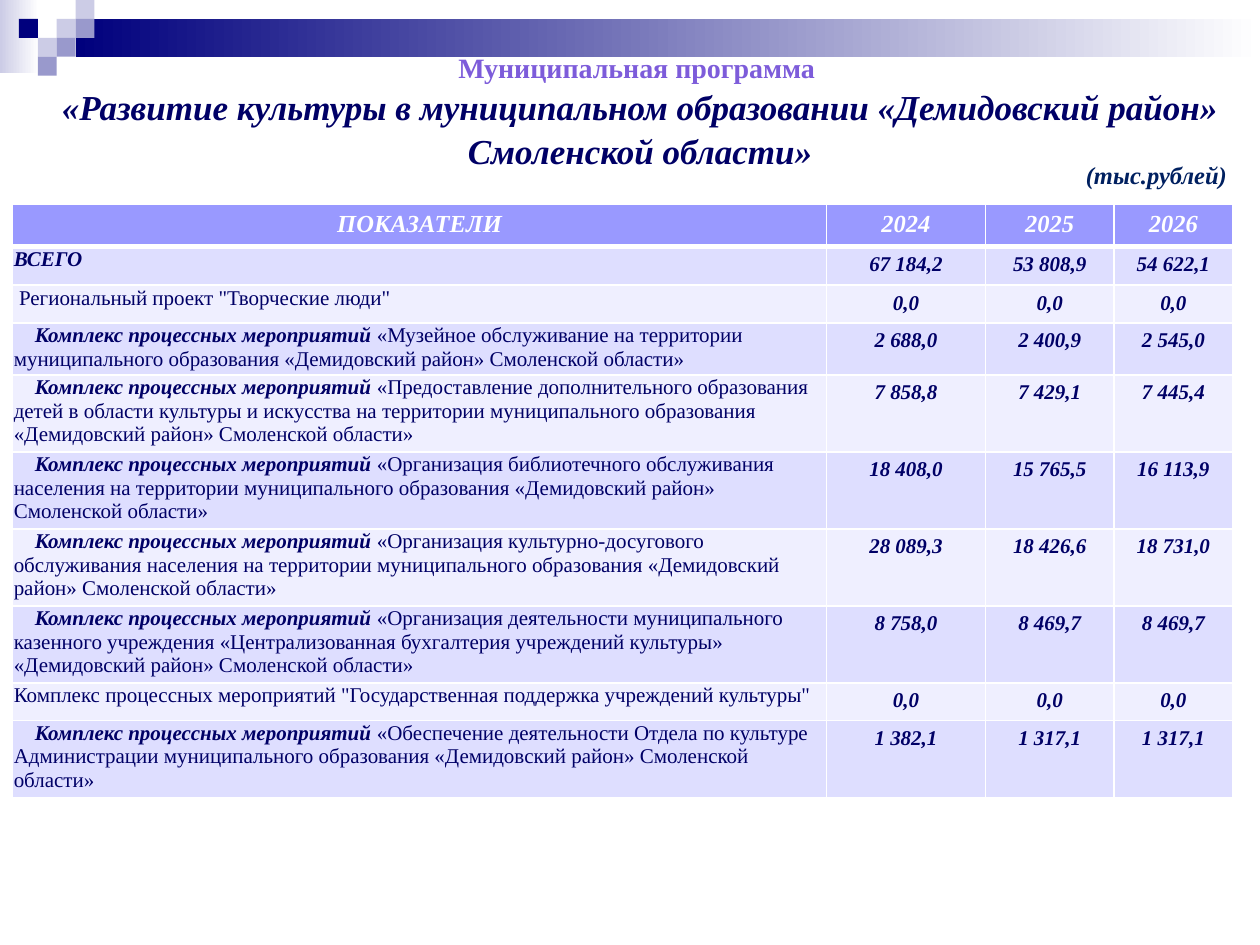
from lxml.etree import SubElement
from pptx import Presentation
from pptx.dml.color import RGBColor
from pptx.enum.shapes import MSO_SHAPE as Shape
from pptx.enum.text import PP_ALIGN as Align
from pptx.oxml.ns import qn
from pptx.util import Pt

FONT = "Times New Roman"
WHITE = RGBColor(0xFF, 0xFF, 0xFF)
NAVY = RGBColor(0x00, 0x00, 0x7D)
LILAC = RGBColor(0xCC, 0xCC, 0xE6)
MID = RGBColor(0x99, 0x99, 0xCC)
INK = RGBColor(0x00, 0x00, 0x66)
VIOLET = RGBColor(0x7D, 0x5C, 0xDA)
BLUE = RGBColor(0x00, 0x20, 0x60)
HEAD = RGBColor(0x99, 0x99, 0xFF)
BANDS = RGBColor(0xDE, 0xDE, 0xFF), RGBColor(0xEF, 0xEF, 0xFF)

TILE = 10.8
TILES = [  # column, row, colour
    (3, 1, LILAC), (4, 0, LILAC), (4, 1, MID), (2, 2, LILAC),
    (1, 1, NAVY), (3, 2, MID), (2, 3, MID),
]

COLS = [465.2, 90.7, 73.6, 67.7]
YEARS = ["ПОКАЗАТЕЛИ", "2024", "2025", "2026"]
LEAD = "Комплекс процессных мероприятий "
AREA = "муниципального образования «Демидовский район» Смоленской области»"
ROWS = [  # height, indent, bold part, plain part, values
    (22, 0, "ВСЕГО", "", ["67 184,2", "53 808,9", "54 622,1"]),
    (21.4, 3, "", 'Региональный проект "Творческие люди"', ["0,0"] * 3),
    (29.7, 12, LEAD, "«Музейное обслуживание на территории " + AREA,
     ["2 688,0", "2 400,9", "2 545,0"]),
    (44, 12, LEAD, "«Предоставление дополнительного образования детей в области "
     "культуры и искусства на территории " + AREA,
     ["7 858,8", "7 429,1", "7 445,4"]),
    (44, 12, LEAD, "«Организация библиотечного обслуживания населения "
     "на территории " + AREA,
     ["18 408,0", "15 765,5", "16 113,9"]),
    (44, 12, LEAD, "«Организация культурно-досугового обслуживания населения "
     "на территории " + AREA,
     ["28 089,3", "18 426,6", "18 731,0"]),
    (44, 12, LEAD, "«Организация деятельности муниципального казенного учреждения "
     "«Централизованная бухгалтерия учреждений культуры» "
     "«Демидовский район» Смоленской области»",
     ["8 758,0", "8 469,7", "8 469,7"]),
    (21.4, 0, "", 'Комплекс процессных мероприятий "Государственная поддержка '
     'учреждений культуры"', ["0,0"] * 3),
    (44, 12, LEAD, "«Обеспечение деятельности Отдела по культуре Администрации " + AREA,
     ["1 382,1", "1 317,1", "1 317,1"]),
]


def add_rect(slide, x, y, w, h):
    box = slide.shapes.add_shape(Shape.RECTANGLE, Pt(x), Pt(y), Pt(w), Pt(h))
    box.shadow.inherit = False
    box.line.fill.background()
    return box.fill


def add_fade(slide, x, y, w, h, tint):
    """Add a bar that fades from the tint to white, left to right."""
    fill = add_rect(slide, x, y, w, h)
    fill.gradient()
    fill.gradient_angle = 0
    for stop, color, place in zip(fill.gradient_stops, (tint, WHITE), (0, 1)):
        stop.color.rgb = color
        stop.position = place


def add_tile(slide, col, row, tint):
    fill = add_rect(slide, col * TILE, row * TILE, TILE, TILE)
    fill.solid()
    fill.fore_color.rgb = tint


def add_run(para, text, size, color, bold=True, italic=True):
    run = para.add_run()
    run.text = text
    font = run.font
    font.name, font.size = FONT, Pt(size)
    font.bold, font.italic = bold, italic
    font.color.rgb = color


def add_box(slide, x, y, w, h, wrap=True):
    frame = slide.shapes.add_textbox(Pt(x), Pt(y), Pt(w), Pt(h)).text_frame
    frame.word_wrap = wrap
    return frame


def add_title(slide):
    frame = add_box(slide, 28.1, 25.2, 675.4, 74.9)
    frame.margin_left = frame.margin_right = Pt(5)
    top, name = frame.paragraphs[0], frame.add_paragraph()
    top.alignment = name.alignment = Align.CENTER
    name.line_spacing = 1.04
    add_run(top, "Муниципальная программа ", 16, VIOLET, italic=False)
    add_run(name, "«Развитие культуры в муниципальном образовании "
            "«Демидовский район» Смоленской области»", 20, INK)


def style_cell(cell, tint, base=1, top=1):
    """Give a cell white borders and a plain fill."""
    props = cell._tc.get_or_add_tcPr()
    for side, width in zip("LRTB", (1, 1, top, base)):
        line = SubElement(props, qn("a:ln" + side), w=str(Pt(width)))
        fill = SubElement(line, qn("a:solidFill"))
        SubElement(fill, qn("a:srgbClr"), val=str(WHITE))
    cell.fill.solid()
    cell.fill.fore_color.rgb = tint


def fill_mid(cell, text, size, color):
    para = cell.text_frame.paragraphs[0]
    para.alignment = Align.CENTER
    add_run(para, text, size, color)


def fill_name(cell, indent, bold, plain):
    cell.margin_left = cell.margin_right = cell.margin_top = Pt(0.7)
    cell.margin_bottom = 0
    para = cell.text_frame.paragraphs[0]
    para._p.get_or_add_pPr().set("indent", str(Pt(indent)))
    if bold:
        add_run(para, bold, 12, INK)
    if plain:
        add_run(para, plain, 12, INK, False, False)


def add_grid(slide):
    high = [23.6] + [row[0] for row in ROWS]
    table = slide.shapes.add_table(
        len(high), len(COLS), Pt(7.2), Pt(116.9), Pt(sum(COLS)), Pt(sum(high))).table
    table.horz_banding = False
    for col, width in zip(table.columns, COLS):
        col.width = Pt(width)
    for row, height in zip(table.rows, high):
        row.height = Pt(height)
    for c, year in enumerate(YEARS):
        cell = table.cell(0, c)
        style_cell(cell, HEAD, base=3)
        fill_mid(cell, year, 14, WHITE)
    for r, (_, indent, bold, plain, values) in enumerate(ROWS, 1):
        for c in range(len(COLS)):
            style_cell(table.cell(r, c), BANDS[(r - 1) % 2], top=3 if r == 1 else 1)
        fill_name(table.cell(r, 0), indent, bold, plain)
        for c, value in enumerate(values, 1):
            fill_mid(table.cell(r, c), value, 12, INK)


def main():
    deck = Presentation()
    deck.slide_width, deck.slide_height = Pt(720), Pt(540)
    slide = deck.slides.add_slide(deck.slide_layouts[6])
    add_fade(slide, 0, 0, 22.3, 41.8, LILAC)
    add_fade(slide, 3 * TILE + TILE, TILE, 720 - 4 * TILE, 2 * TILE, NAVY)
    for tile in TILES:
        add_tile(slide, *tile)
    add_title(slide)
    add_grid(slide)
    unit = add_box(slide, 613.4, 87.8, 95.8, 24.5, wrap=False)
    add_run(unit.paragraphs[0], "(тыс.рублей)", 14, BLUE)
    deck.save("out.pptx")


if __name__ == "__main__":
    main()
